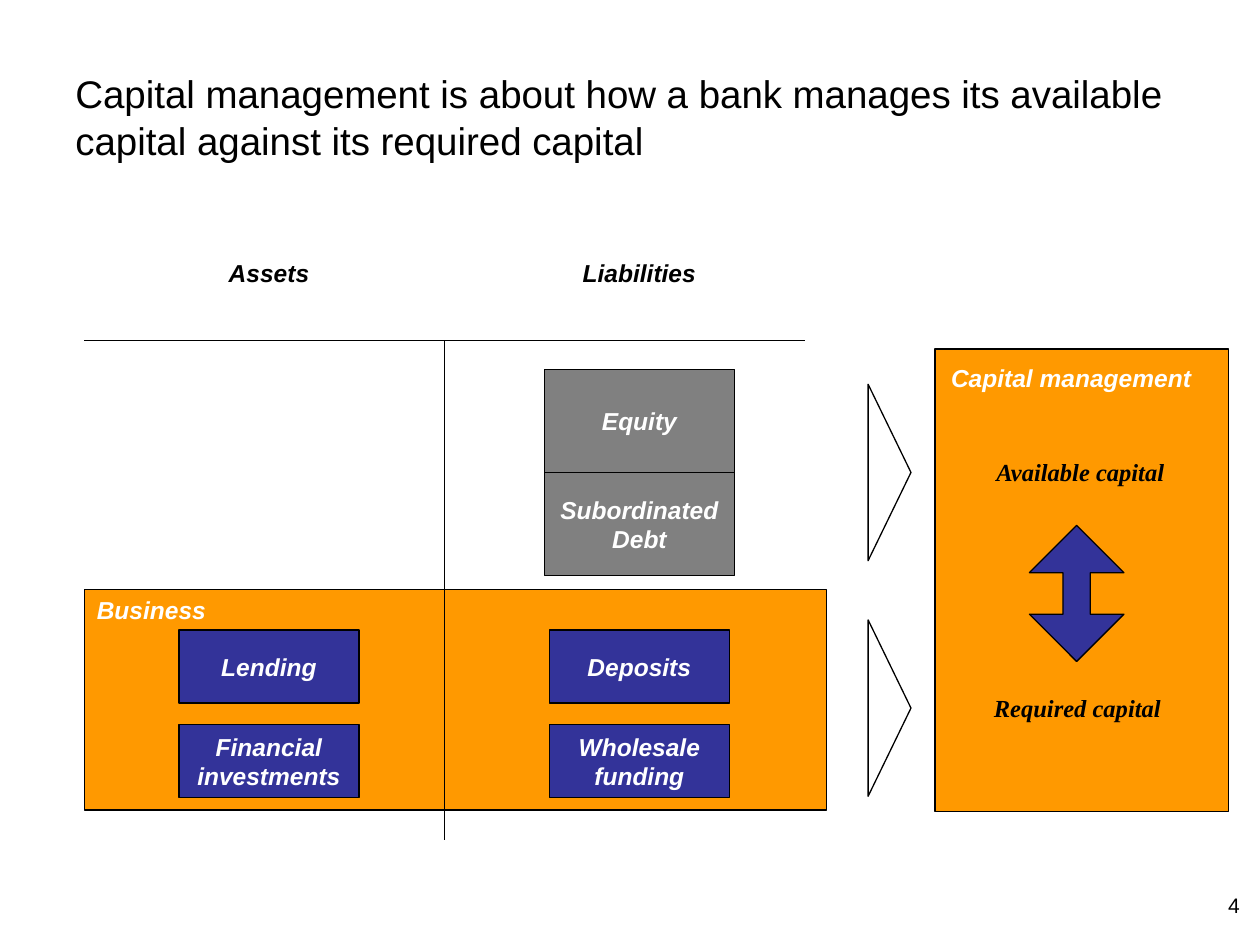
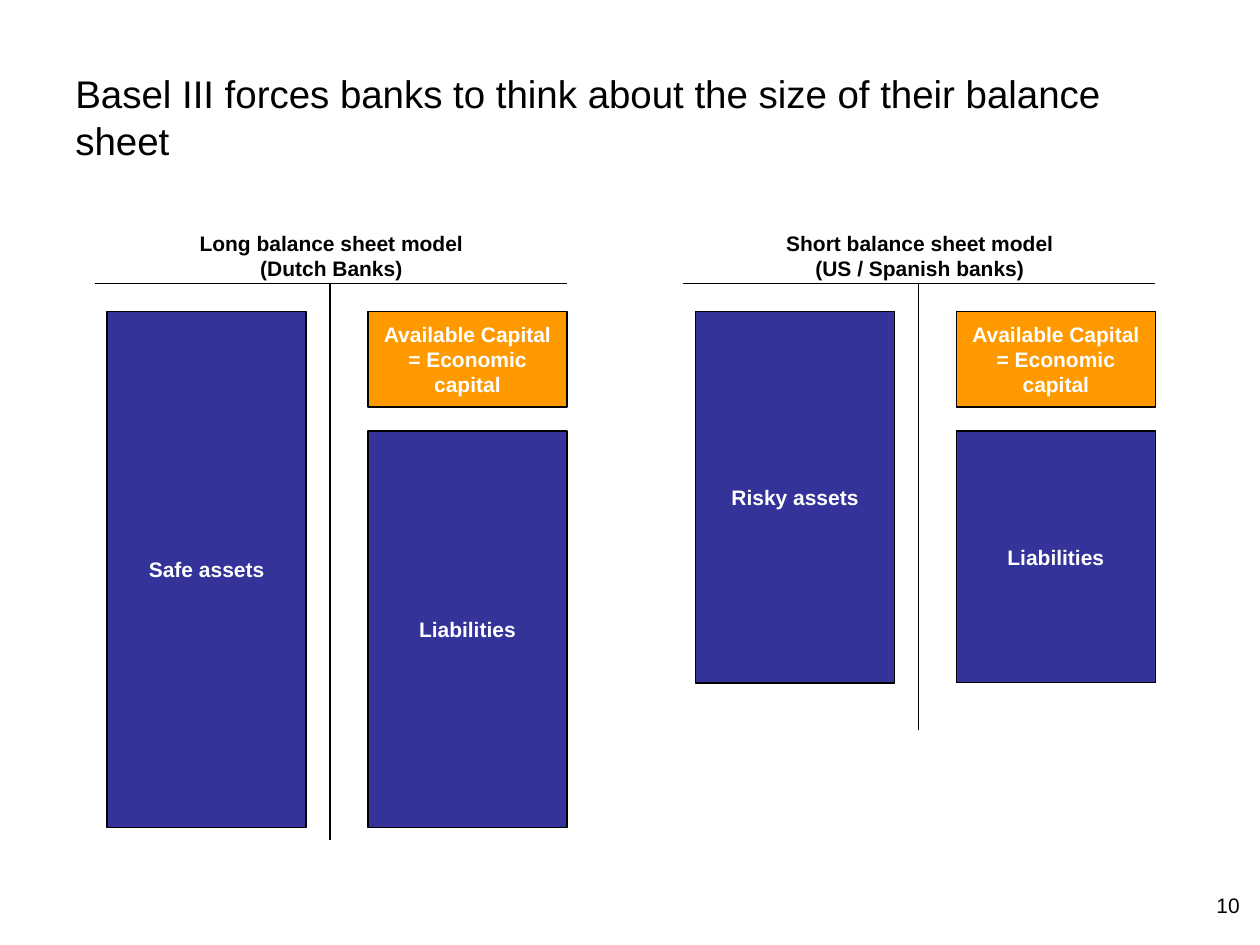
"""Build two slides on bank capital management and balance sheet size."""
from lxml.etree import SubElement
from pptx import Presentation
from pptx.dml.color import RGBColor
from pptx.enum.shapes import MSO_CONNECTOR, MSO_SHAPE
from pptx.enum.text import MSO_ANCHOR, PP_ALIGN
from pptx.oxml.ns import qn
from pptx.util import Inches, Pt

THEME = {
    "black": RGBColor.from_string("000000"),
    "white": RGBColor.from_string("FFFFFF"),
    "orange": RGBColor.from_string("FF9900"),
    "blue": RGBColor.from_string("333399"),
    "grey": RGBColor.from_string("808080"),
    "line": Pt(0.75),
    "title": {"name": "Arial", "size": Pt(22)},
    "number": {"name": "Arial", "size": Pt(12)},
    "label": {"name": "Arial", "size": Pt(14), "bold": True, "italic": True},
    "capital": {"name": "Times New Roman", "size": Pt(14), "bold": True, "italic": True},
    "sheet": {"name": "Arial", "size": Pt(12), "bold": True},
}


def add_part(slide, box, text="", style="label", color="black", fill=None,
             preset=MSO_SHAPE.RECTANGLE, align=PP_ALIGN.CENTER,
             anchor=MSO_ANCHOR.MIDDLE, inset=(0.1, 0.05)):
    place = [Inches(value) for value in box]
    if fill:
        part = slide.shapes.add_shape(preset, *place)
        part.shadow.inherit = False
        part.fill.solid()
        part.fill.fore_color.rgb = THEME[fill]
        part.line.color.rgb = THEME["black"]
        part.line.width = THEME["line"]
    else:
        part = slide.shapes.add_textbox(*place)
    if text:
        across, down = (Inches(value) for value in inset)
        frame_format = {"word_wrap": True, "vertical_anchor": anchor,
                        "margin_left": across, "margin_right": across,
                        "margin_top": down, "margin_bottom": down}
        for key, value in frame_format.items():
            setattr(part.text_frame, key, value)
        paragraph = part.text_frame.paragraphs[0]
        paragraph.alignment = align
        run = paragraph.add_run()
        run.text = text
        for key, value in THEME[style].items():
            setattr(run.font, key, value)
        run.font.color.rgb = THEME[color]
    return part


def add_rule(slide, *ends):
    rule = slide.shapes.add_connector(
        MSO_CONNECTOR.STRAIGHT, *[Inches(value) for value in ends])
    rule.line.color.rgb = THEME["black"]
    rule.line.width = THEME["line"]
    SubElement(rule._element.spPr, qn("a:effectLst"))


deck = Presentation()
deck.slide_width, deck.slide_height = Inches(10), Inches(7.5)

pages = []
for number, headline in [
    ("4", "Capital management is about how a bank manages its available "
          "capital against its required capital"),
    ("10", "Basel III forces banks to think about the size of their balance sheet"),
]:
    page = deck.slides.add_slide(deck.slide_layouts[6])
    add_part(page, (9.53, 7.08, 0.31, 0.2), number, "number",
             align=PP_ALIGN.RIGHT, anchor=MSO_ANCHOR.TOP, inset=(0, 0))
    add_part(page, (0.5, 0.3, 9, 1.25), headline, "title", align=PP_ALIGN.LEFT)
    pages.append(page)
capital_page, basel_page = pages

add_part(capital_page, (7.42, 2.77, 2.33, 3.67), fill="orange")
add_part(capital_page, (0.67, 4.68, 5.89, 1.75), fill="orange")
for row, funding in enumerate(["Equity", "Subordinated Debt"]):
    add_part(capital_page, (4.32, 2.93 + row * 0.82, 1.51, 0.82), funding,
             color="white", fill="grey")
add_rule(capital_page, 3.53, 2.7, 3.53, 6.67)
add_rule(capital_page, 0.67, 2.7, 6.39, 2.7)

for heading, left, top, width in [("Business", 0.67, 4.67, 3.2),
                                  ("Capital management", 7.45, 2.83, 2.3)]:
    add_part(capital_page, (left, top, width, 0.33), heading, color="white",
             align=PP_ALIGN.LEFT, anchor=MSO_ANCHOR.TOP)

for side, heading_left, activity_left, activities in [
    ("Assets", 1.17, 1.42, ["Lending", "Financial investments"]),
    ("Liabilities", 4.11, 4.36, ["Deposits", "Wholesale funding"]),
]:
    add_part(capital_page, (heading_left, 2, 1.93, 0.33), side, anchor=MSO_ANCHOR.TOP)
    for row, activity in enumerate(activities):
        add_part(capital_page, (activity_left, 5 + row * 0.75, 1.43, 0.58), activity,
                 color="white", fill="blue")

for capital, top in [("Available capital", 3.58), ("Required capital ", 5.45)]:
    pointer = add_part(capital_page, (6.36, top, 1.4, 0.34), fill="white",
                       preset=MSO_SHAPE.ISOSCELES_TRIANGLE)
    pointer.rotation = 90
    add_part(capital_page, (7.48, top, 2.19, 0.33), capital, "capital",
             anchor=MSO_ANCHOR.TOP)
balance = add_part(capital_page, (8.17, 4.17, 0.75, 1.08), fill="blue",
                   preset=MSO_SHAPE.UP_DOWN_ARROW)
balance.adjustments[0], balance.adjustments[1] = 0.5, 0.29

for model, assets, left, bottom, axis_end in [
    ("Long balance sheet model (Dutch Banks)", "Safe assets", 0.75, 6.57, 6.67),
    ("Short balance sheet model (US / Spanish banks)", "Risky assets", 5.42, 5.42, 5.79),
]:
    add_rule(basel_page, left + 1.87, 2.25, left + 1.87, axis_end)
    add_rule(basel_page, left, 2.25, left + 3.75, 2.25)
    add_part(basel_page, (left + 0.67, 1.78, 2.42, 0.5), model, "sheet",
             anchor=MSO_ANCHOR.TOP)
    for entry, offset, top, end, fill in [
        (assets, 0.1, 2.47, bottom, "blue"),
        ("Available Capital = Economic capital", 2.17, 2.47, 3.23, "orange"),
        ("Liabilities", 2.17, 3.42, bottom, "blue"),
    ]:
        add_part(basel_page, (left + offset, top, 1.58, end - top), entry, "sheet",
                 color="white", fill=fill)

deck.save("out.pptx")
